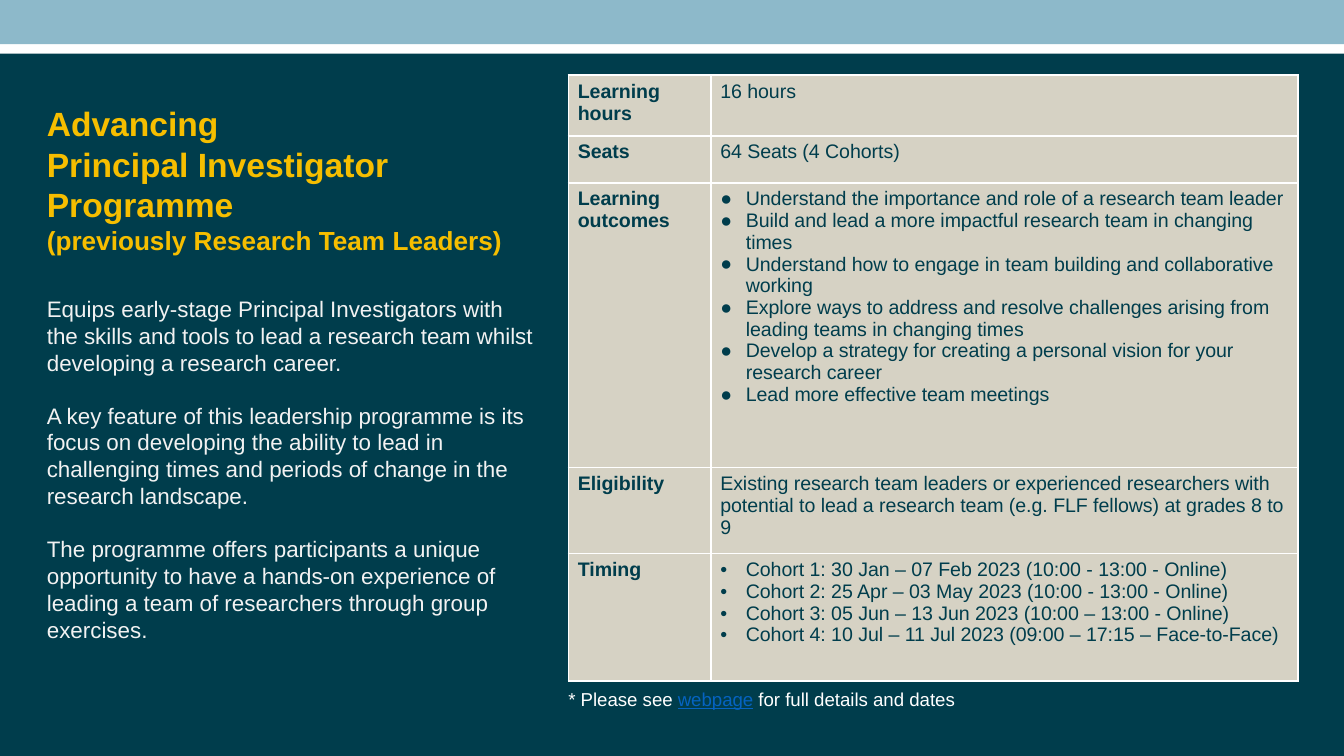
from pptx import Presentation
from pptx.dml.color import RGBColor
from pptx.enum.shapes import MSO_SHAPE as Kind
from pptx.oxml.ns import qn
from pptx.util import Inches, Pt
from lxml.etree import SubElement as sub

WIDE, HIGH = 10, 10 * 9 / 16
TEAL, SAND, GOLD, WHITE, PALE = "003D4C", "D6D2C4", "F6BE00", "FFFFFF", "F2F2F2"

ROWS = [
    ("Learning hours", 0.45, None, ["16 hours"]),
    ("Seats", 0.35, None, ["64 Seats (4 Cohorts)"]),
    ("Learning outcomes", 2.12, "●", [
        "Understand the importance and role of a research team leader",
        "Build and lead a more impactful research team in changing times",
        "Understand how to engage in team building and collaborative working",
        "Explore ways to address and resolve challenges arising from leading teams in changing times",
        "Develop a strategy for creating a personal vision for your research career",
        "Lead more effective team meetings"]),
    ("Eligibility", 0.64, None, [
        "Existing research team leaders or experienced researchers with "
        "potential to lead a research team (e.g. FLF fellows) at grades 8 to 9"]),
    ("Timing", 0.95, "•", [
        "Cohort 1: 30 Jan – 07 Feb 2023 (10:00 - 13:00 - Online)",
        "Cohort 2: 25 Apr – 03 May 2023 (10:00 - 13:00 - Online)",
        "Cohort 3: 05 Jun – 13 Jun 2023 (10:00 – 13:00 - Online)",
        "Cohort 4: 10 Jul – 11 Jul 2023 (09:00 – 17:15 – Face-to-Face)"]),
]

# Text, size, colour, bold, space before
INTRO = [
    ("Advancing\vPrincipal Investigator\vProgramme", 18, GOLD, True, 0),
    ("(previously Research Team Leaders)", 14, GOLD, True, 0),
    ("Equips early-stage Principal Investigators with the skills and tools to "
     "lead a research team whilst developing a research career.", 12, PALE, False, 21),
    ("A key feature of this leadership programme is its focus on developing the ability to "
     "lead in challenging times and periods of change in the research landscape.",
     12, PALE, False, 14),
    ("The programme offers participants a unique opportunity to have a hands-on experience "
     "of leading a team of researchers through group exercises.", 12, PALE, False, 14),
]


def color(code):
    return RGBColor.from_string(code)


def style(run, size, code, bold=False):
    font = run.font
    font.name, font.size, font.bold = "Arial", Pt(size), bold
    font.color.rgb = color(code)


def block(slide, x, y, w, h, code):
    shape = slide.shapes.add_shape(Kind.RECTANGLE, Inches(x), Inches(y), Inches(w), Inches(h))
    shape.shadow.inherit = False
    shape.fill.solid()
    shape.fill.fore_color.rgb = color(code)
    shape.line.fill.background()


def text_box(slide, x, y, w, h):
    frame = slide.shapes.add_textbox(Inches(x), Inches(y), Inches(w), Inches(h)).text_frame
    frame.word_wrap = True
    return frame


def next_par(frame, index):
    return frame.add_paragraph() if index else frame.paragraphs[0]


def bullet(par, mark):
    props = par._p.get_or_add_pPr()
    props.set("marL", str(Inches(0.19)))
    props.set("indent", str(-Inches(0.19)))
    sub(sub(props, qn("a:buClr")), qn("a:srgbClr"), val=TEAL)
    sub(props, qn("a:buFont"), typeface="Arial")
    sub(props, qn("a:buChar"), char=mark)


def border(cell):
    props = cell._tc.get_or_add_tcPr()
    for index, side in enumerate(("a:lnL", "a:lnR", "a:lnT", "a:lnB")):
        line = props.makeelement(qn(side), {"w": str(Pt(1))})
        sub(sub(line, qn("a:solidFill")), qn("a:srgbClr"), val=WHITE)
        props.insert(index, line)


def fill_cell(cell, lines, bold=False, mark=None):
    cell.margin_left = cell.margin_right = Inches(0.07)
    cell.margin_top = cell.margin_bottom = Inches(0.04)
    cell.fill.solid()
    cell.fill.fore_color.rgb = color(SAND)
    border(cell)
    for index, line in enumerate(lines):
        par = next_par(cell.text_frame, index)
        par.text = line
        if mark:
            bullet(par, mark)
        style(par.runs[0], 10.5, TEAL, bold)


def backdrop(slide, x, y, w, h):
    block(slide, x, y, w, 0.33, "8DB9CA")
    block(slide, x, y + 0.4, w, h - 0.4, TEAL)


def intro(slide, x, y, w, h):
    frame = text_box(slide, x, y, w, h)
    frame.margin_right = Inches(0.13)
    for index, (text, size, code, bold, gap) in enumerate(INTRO):
        par = next_par(frame, index)
        par.text = text
        par.space_before = Pt(gap)
        for run in par.runs:
            style(run, size, code, bold)


def details(slide, x, y, w, h):
    table = slide.shapes.add_table(
        len(ROWS), 2, Inches(x), Inches(y), Inches(w), Inches(h)).table
    table.first_row = table.horz_banding = False
    table.columns[0].width = Inches(1.06)
    table.columns[1].width = Inches(w - 1.06)
    for index, (label, high, mark, lines) in enumerate(ROWS):
        table.rows[index].height = Inches(high)
        fill_cell(table.cell(index, 0), [label], bold=True)
        fill_cell(table.cell(index, 1), lines, mark=mark)


def footnote(slide, x, y, w, h):
    par = text_box(slide, x, y, w, h).paragraphs[0]
    for text, code in (("* Please see ", WHITE), ("webpage", "0563C1"),
                       (" for full details and dates", WHITE)):
        run = par.add_run()
        run.text = text
        style(run, 10, code)
        run.font.underline = code != WHITE


def main():
    deck = Presentation()
    deck.slide_width, deck.slide_height = Inches(WIDE), Inches(HIGH)
    slide = deck.slides.add_slide(deck.slide_layouts[6])
    backdrop(slide, 0, 0, WIDE, HIGH)
    details(slide, 4.23, 0.56, 5.43, 4.51)
    intro(slide, 0.25, 0.72, 3.88, 4.48)
    footnote(slide, 4.13, 5.07, 4.22, 0.27)
    deck.save("out.pptx")


if __name__ == "__main__":
    main()
